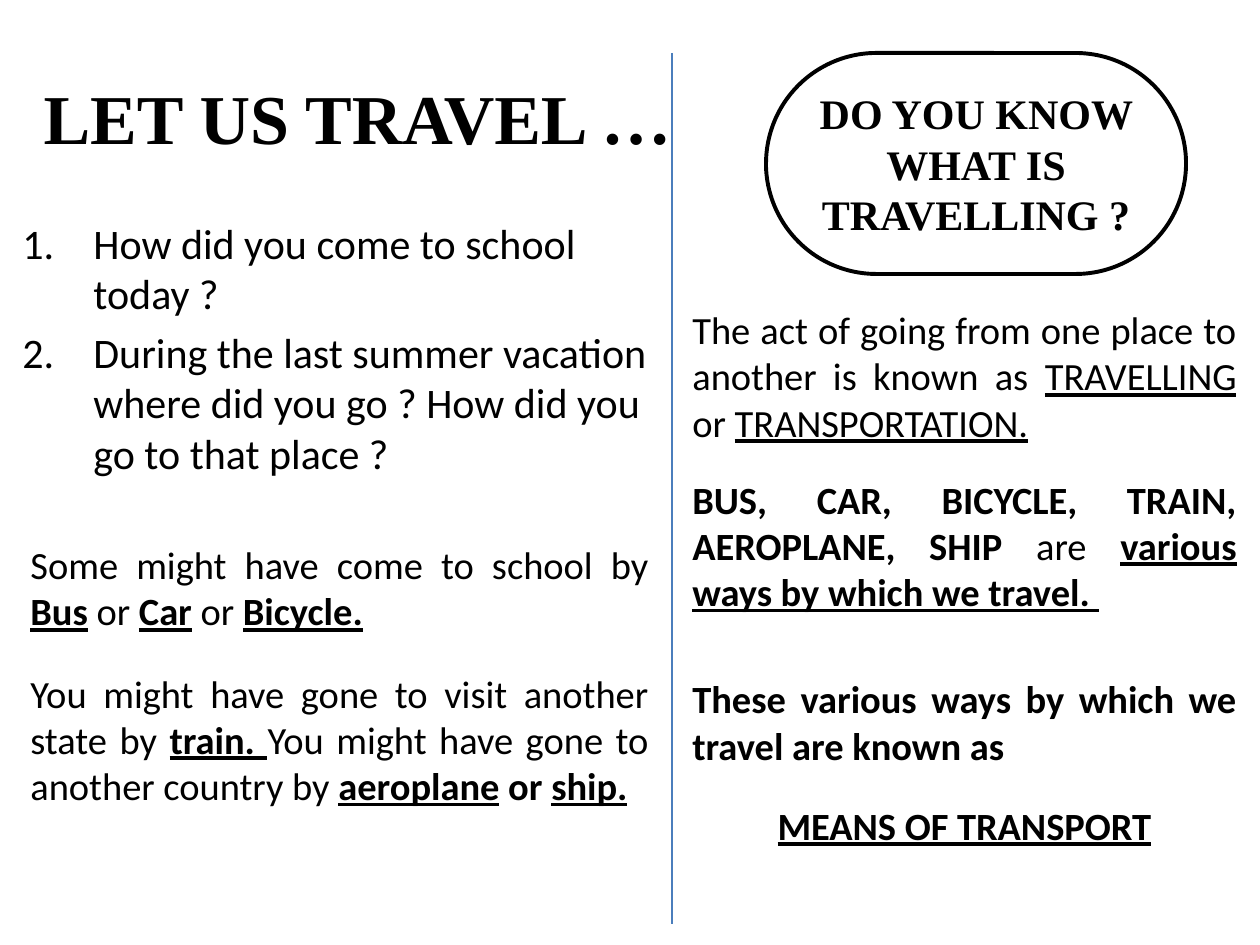
from lxml import etree
from pptx import Presentation
from pptx.dml.color import RGBColor
from pptx.enum.shapes import MSO_CONNECTOR, MSO_SHAPE
from pptx.enum.text import MSO_ANCHOR, MSO_AUTO_SIZE, PP_ALIGN
from pptx.oxml.ns import qn
from pptx.util import Emu, Pt

LEFT, CENTER, JUSTIFY = PP_ALIGN.LEFT, PP_ALIGN.CENTER, PP_ALIGN.JUSTIFY
BLACK = RGBColor(0x00, 0x00, 0x00)
DIVIDER_BLUE = RGBColor(0x4B, 0x7E, 0xBC)
HEADING_FONT, BODY_FONT = "Times New Roman", "Calibri"
TITLE_ONLY = 5
INDENT = 71
BODY_SIZE = 22
# Run styles
PLAIN, BOLD, UNDER, STRONG = "", "b", "u", "bu"


def px(length):
    """126 px to the inch."""
    return Emu(round(length * 914400 / 126))


def write(paragraph, runs, size=BODY_SIZE, font=BODY_FONT, align=JUSTIFY,
          before=0, indent=0, numbered=False):
    """Fill a paragraph with (text, style) runs."""
    properties = paragraph._p.get_or_add_pPr()
    properties.set("marL", str(px(indent)))
    properties.set("indent", str(-px(indent) if numbered else 0))
    if numbered:
        etree.SubElement(properties, qn("a:buAutoNum"), type="arabicPeriod")
    paragraph.alignment = align
    paragraph.space_before = Pt(before)
    for text, style in runs:
        run = paragraph.add_run()
        run.text = text
        run.font.name = font
        run.font.size = Pt(size)
        run.font.color.rgb = BLACK
        run.font.bold = "b" in style
        run.font.underline = "u" in style


def add_passage(slide, box, paragraphs, **shared):
    """Place a text box; paragraphs are (runs, own format) pairs."""
    passage = slide.shapes.add_textbox(*map(px, box))
    frame = passage.text_frame
    frame.word_wrap = True
    frame.auto_size = MSO_AUTO_SIZE.NONE
    for index, (runs, own) in enumerate(paragraphs):
        paragraph = frame.add_paragraph() if index else frame.paragraphs[0]
        write(paragraph, runs, indent=INDENT, **shared, **own)


def add_title(slide, box):
    title = slide.shapes.title
    title.left, title.top, title.width, title.height = map(px, box)
    frame = title.text_frame
    frame.auto_size = MSO_AUTO_SIZE.NONE
    frame.vertical_anchor = MSO_ANCHOR.TOP
    frame.margin_top = px(22)
    write(frame.paragraphs[0], [("LET US TRAVEL …", BOLD)],
          size=40, font=HEADING_FONT, align=LEFT)


def add_question_bubble(slide, box):
    bubble = slide.shapes.add_shape(MSO_SHAPE.ROUNDED_RECTANGLE, *map(px, box))
    bubble.adjustments[0] = 0.5
    bubble.shadow.inherit = False
    bubble.fill.background()
    bubble.line.color.rgb = BLACK
    bubble.line.width = Pt(2.25)
    frame = bubble.text_frame
    frame.word_wrap = True
    frame.vertical_anchor = MSO_ANCHOR.MIDDLE
    write(frame.paragraphs[0], [("DO YOU KNOW WHAT IS TRAVELLING ?", BOLD)],
          size=24, font=HEADING_FONT, align=CENTER)


def add_divider(slide, x, top, bottom):
    divider = slide.shapes.add_connector(
        MSO_CONNECTOR.STRAIGHT, px(x), px(top), px(x), px(bottom))
    divider.line.color.rgb = DIVIDER_BLUE
    divider.line.width = Pt(0.75)
    etree.SubElement(divider._element.spPr, qn("a:effectLst"))


def add_left_page(slide, x, y):
    add_title(slide, (x + 21, y, 1071, 203))
    # Questions
    add_passage(slide, (x, y + 158, 651, 242), [
        ([("How did you come to school today ?", PLAIN)], {}),
        ([("During the last summer vacation where did you go ? "
           "How did you go to that place ?", PLAIN)], {"before": 4.8}),
    ], size=24, align=LEFT, numbered=True)
    # Possible answers
    add_passage(slide, (x - 63, y + 482, 714, 296), [
        ([("Some might have come to school by ", PLAIN), ("Bus", STRONG),
          (" or ", PLAIN), ("Car", STRONG), (" or ", PLAIN),
          ("Bicycle.", STRONG)], {}),
        ([("You might have gone to visit another state by ", PLAIN),
          ("train. ", STRONG),
          ("You might have gone to another country by ", PLAIN),
          ("aeroplane", STRONG), (" or ", BOLD), ("ship.", STRONG)],
         {"before": 20.6}),
    ])


def add_right_page(slide, x, y):
    add_question_bubble(slide, (x + 157, y, 420, 221))
    # Definitions
    add_passage(slide, (x, y + 247, 640, 626), [
        ([("The act of going from one place to another is known as ", PLAIN),
          ("TRAVELLING", UNDER), (" or ", PLAIN),
          ("TRANSPORTATION.", UNDER)], {}),
        ([("BUS, CAR, BICYCLE, TRAIN, AEROPLANE, SHIP ", BOLD),
          ("are ", PLAIN), ("various ways by which we travel. ", STRONG)],
         {"before": 17.7}),
        ([("These various ways by which we travel are known as", BOLD)],
         {"before": 34.9}),
        ([("MEANS OF TRANSPORT", STRONG)],
         {"before": 19.4, "align": CENTER}),
    ])


def main():
    presentation = Presentation()
    presentation.slide_width, presentation.slide_height = px(1260), px(945)
    slide = presentation.slides.add_slide(
        presentation.slide_layouts[TITLE_ONLY])
    add_left_page(slide, 10, 53)
    add_divider(slide, 672, 53, 924)
    add_right_page(slide, 609, 53)
    presentation.save("out.pptx")


if __name__ == "__main__":
    main()
